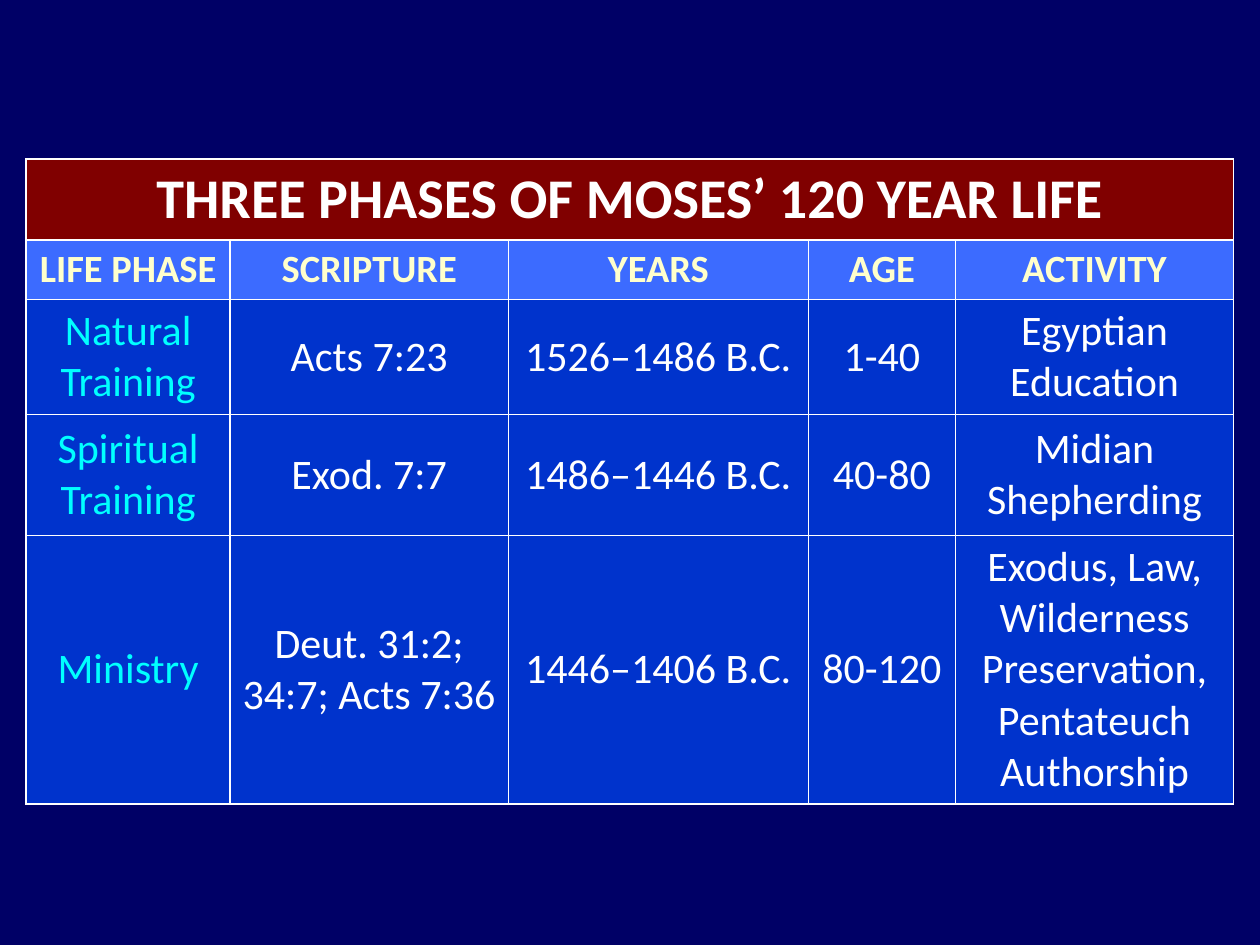
import lxml.etree
import pptx
import pptx.dml.color
import pptx.enum.text
import pptx.oxml.ns
import pptx.util

Pt = pptx.util.Pt
qn = pptx.oxml.ns.qn
RGB = pptx.dml.color.RGBColor.from_string

hues = {
    "back": "000066", "title": "800000", "head": "3C6BFF", "body": "0033CC",
    "white": "FFFFFF", "cream": "FFFFCC", "cyan": "00FFFF",
}
title = {"fill": "title", "hue": "white", "size": 32, "bold": True}
head = {"fill": "head", "hue": "cream", "size": 22, "bold": True}
body = {"fill": "body", "hue": "white", "size": 24, "bold": False}
phase = {**body, "hue": "cyan"}

rows = [
    ["THREE PHASES OF MOSES’ 120 YEAR LIFE", "", "", "", ""],
    ["LIFE PHASE", "SCRIPTURE", "YEARS", "AGE", "ACTIVITY"],
    ["Natural Training", "Acts 7:23", "1526–1486 B.C.", "1-40",
     "Egyptian Education"],
    ["Spiritual Training", "Exod. 7:7", "1486–1446 B.C.", "40-80",
     "Midian Shepherding"],
    ["Ministry", "Deut. 31:2; 34:7; Acts 7:36", "1446–1406 B.C.", "80-120",
     "Exodus, Law, Wilderness Preservation, Pentateuch Authorship"],
]
wide = [116.5, 159, 171.5, 84, 159]
high = [30, 30, 48, 69, 152.5]


def edge(cell):
    """Draw a thin white line on each side of a cell."""
    props = cell._tc.get_or_add_tcPr()
    for side in ("a:lnL", "a:lnR", "a:lnT", "a:lnB"):
        line = lxml.etree.SubElement(props, qn(side), w=str(Pt(1)))
        fill = lxml.etree.SubElement(line, qn("a:solidFill"))
        lxml.etree.SubElement(fill, qn("a:srgbClr"), val=hues["white"])


# Slide
deck = pptx.Presentation()
deck.slide_width, deck.slide_height = Pt(720), Pt(540)
slide = deck.slides.add_slide(deck.slide_layouts[6])
slide.background.fill.solid()
slide.background.fill.fore_color.rgb = RGB(hues["back"])

# Table grid
frame = slide.shapes.add_table(
    len(rows), len(wide), Pt(15), Pt(90.75), Pt(sum(wide)), Pt(sum(high)))
table = frame.table
for col, width in zip(table.columns, wide):
    col.width = Pt(width)
for row, height in zip(table.rows, high):
    row.height = Pt(height)
table.cell(0, 0).merge(table.cell(0, len(wide) - 1))

# Cells
for r, texts in enumerate(rows):
    for c, text in enumerate(texts):
        if r < 2:
            look = (title, head)[r]
        else:
            look = body if c else phase
        cell = table.cell(r, c)
        edge(cell)
        cell.fill.solid()
        cell.fill.fore_color.rgb = RGB(hues[look["fill"]])
        cell.vertical_anchor = pptx.enum.text.MSO_ANCHOR.MIDDLE
        if not text:
            continue
        para = cell.text_frame.paragraphs[0]
        para.alignment = pptx.enum.text.PP_ALIGN.CENTER
        run = para.add_run()
        run.text = text
        run.font.color.rgb = RGB(hues[look["hue"]])
        form = {"name": "Calibri", "size": Pt(look["size"]),
                "bold": look["bold"]}
        for key, value in form.items():
            setattr(run.font, key, value)

deck.save("out.pptx")
